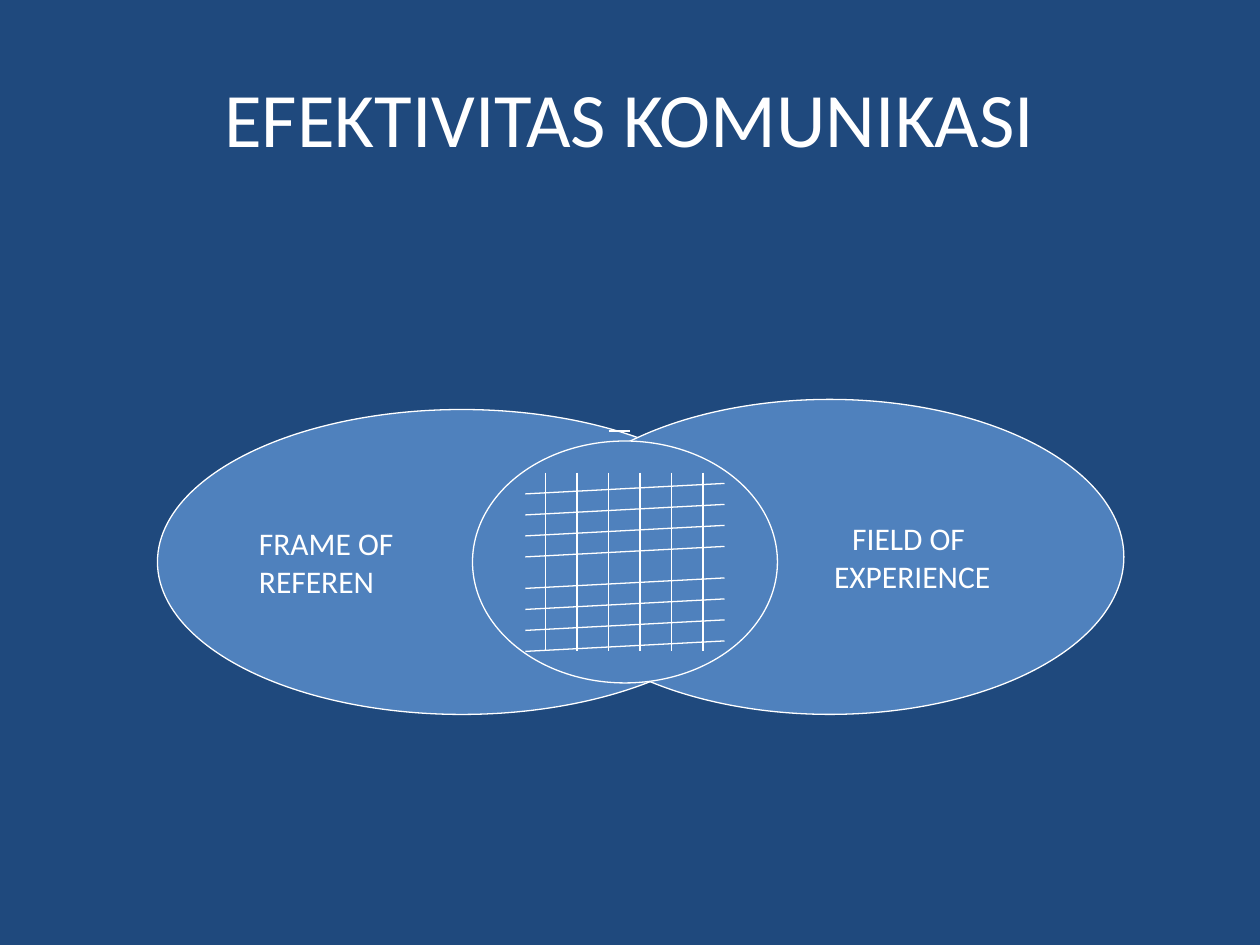
import collections

import pptx
import pptx.dml.color
import pptx.enum.shapes
import pptx.enum.text
import pptx.oxml
import pptx.oxml.ns
import pptx.util

Inches = pptx.util.Inches
Align = pptx.enum.text.PP_ALIGN
Box = collections.namedtuple("Box", "left top width height")


class Theme:
    background = pptx.dml.color.RGBColor.from_string("1F497D")
    ellipse = pptx.dml.color.RGBColor.from_string("4F81BD")
    ink = pptx.dml.color.RGBColor.from_string("FFFFFF")
    font = "Calibri"
    title_size = pptx.util.Pt(44)
    label_size = pptx.util.Pt(18)
    line_width = pptx.util.Pt(0.75)


def write_lines(frame, lines, size, align, indent=0):
    frame.vertical_anchor = pptx.enum.text.MSO_ANCHOR.MIDDLE
    frame.word_wrap = True
    frame.text = "\n".join(lines)
    for paragraph in frame.paragraphs:
        paragraph.alignment = align
        if indent:
            margins = {"marL": Inches(indent), "indent": 0}
            for key, value in margins.items():
                paragraph._p.get_or_add_pPr().set(key, str(value))
        font = paragraph.runs[0].font
        for key, value in {"name": Theme.font, "size": size}.items():
            setattr(font, key, value)
        font.color.rgb = Theme.ink


def outline(line):
    line.color.rgb = Theme.ink
    line.width = Theme.line_width


def add_line(slide, x1, y1, x2, y2):
    stroke = slide.shapes.add_connector(
        pptx.enum.shapes.MSO_CONNECTOR.STRAIGHT, *map(Inches, (x1, y1, x2, y2)))
    outline(stroke.line)
    stroke._element.spPr.append(pptx.oxml.parse_xml(
        f"<a:effectLst {pptx.oxml.ns.nsdecls('a')}/>"))


def add_ellipse(slide, box):
    ellipse = slide.shapes.add_shape(
        pptx.enum.shapes.MSO_SHAPE.OVAL, *map(Inches, box))
    ellipse.shadow.inherit = False
    ellipse.fill.solid()
    ellipse.fill.fore_color.rgb = Theme.ellipse
    outline(ellipse.line)
    return ellipse


def add_title(slide, box, text):
    title = slide.shapes.title
    for key, value in box._asdict().items():
        setattr(title, key, Inches(value))
    write_lines(title.text_frame, [text], Theme.title_size, Align.CENTER)


def add_field(slide, box, lines, align, indent=0):
    ellipse = add_ellipse(slide, box)
    write_lines(ellipse.text_frame, lines, Theme.label_size, align, indent)


def add_overlap(slide, box):
    # Short dash above the shared area
    dash_left, dash_top = box.left + 1.08, box.top - 0.08
    add_line(slide, dash_left, dash_top, dash_left + 0.17, dash_top)
    add_ellipse(slide, box)

    # Two bands of four slanted lines
    left, right = box.left + 0.42, box.left + 2
    for band_top in (box.top + 0.42, box.top + 1.17):
        for row in range(4):
            y = band_top + row / 6
            add_line(slide, left, y, right, y - 1 / 12)

    # Six upright lines
    for column in range(6):
        x = box.left + 0.58 + column * 0.25
        add_line(slide, x, box.top + 0.25, x, box.top + 1.67)


def main():
    deck = pptx.Presentation()
    deck.slide_width, deck.slide_height = Inches(10), Inches(7.5)
    slide = deck.slides.add_slide(deck.slide_layouts.get_by_name("Title Only"))
    slide.background.fill.solid()
    slide.background.fill.fore_color.rgb = Theme.background

    add_title(slide, Box(0.5, 0.3, 9, 1.25), "EFEKTIVITAS KOMUNIKASI")
    add_field(slide, Box(1.25, 3.25, 4.83, 2.42),
              ["FRAME OF", "REFEREN"], Align.LEFT)
    add_field(slide, Box(4.25, 3.17, 4.67, 2.5),
              ["FIELD OF ", "EXPERIENCE"], Align.CENTER, indent=1.31)
    add_overlap(slide, Box(3.75, 3.5, 2.42, 1.92))
    deck.save("out.pptx")


if __name__ == "__main__":
    main()
